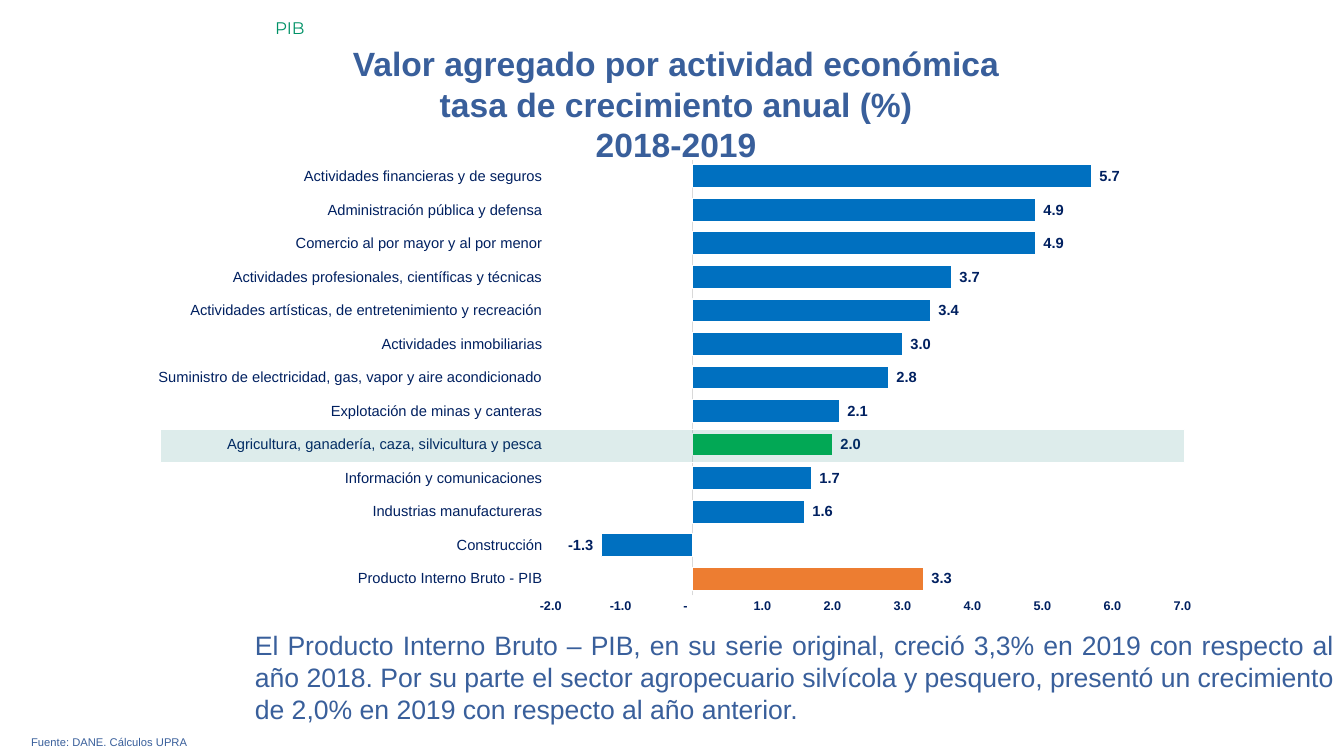
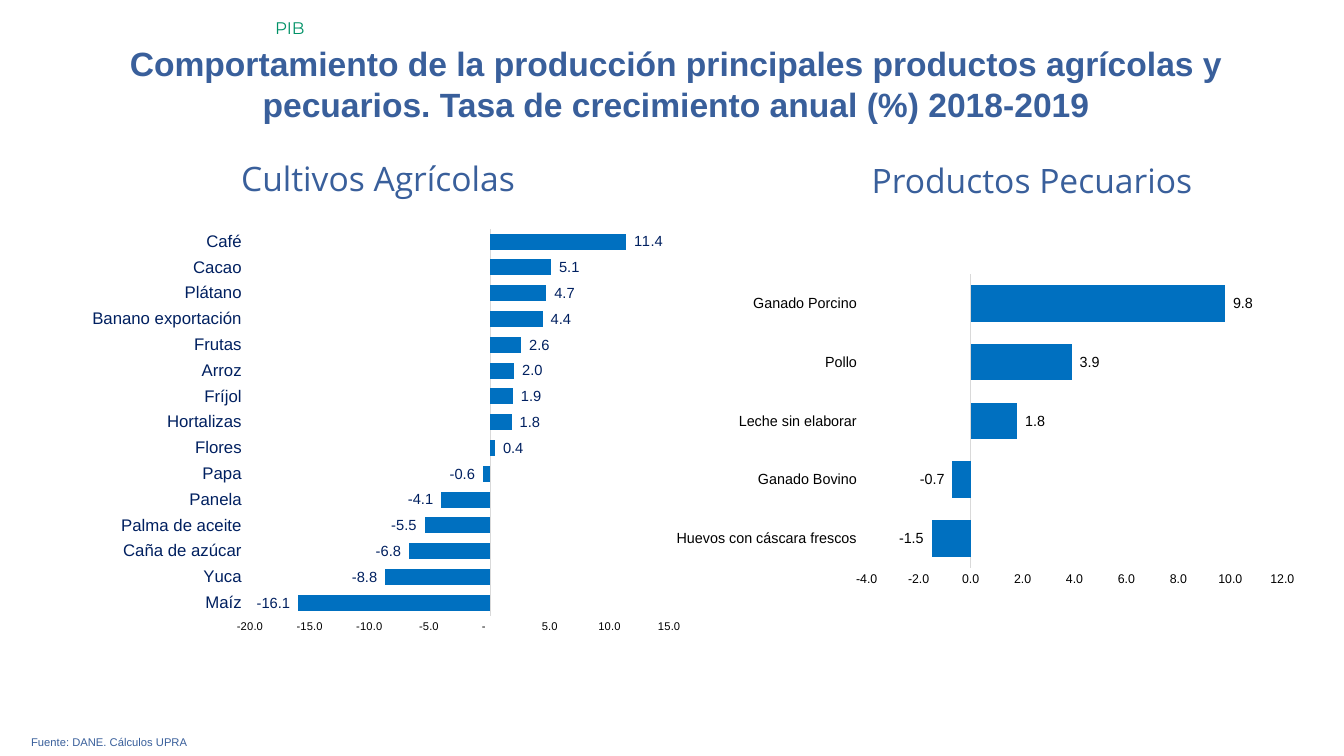
from lxml import etree
from pptx import Presentation
from pptx import util as u
from pptx.chart.data import CategoryChartData
from pptx.dml.color import RGBColor
from pptx.enum import chart as ch
from pptx.enum import shapes, text
from pptx.oxml import ns

PX = 9144  # 100 px to the inch

STEEL = RGBColor(0x39, 0x5F, 0x9B)
GREEN = RGBColor(0x00, 0x92, 0x67)
NAVY = RGBColor(0x00, 0x20, 0x60)
BLACK = RGBColor(0x00, 0x00, 0x00)
WHITE = RGBColor(0xFF, 0xFF, 0xFF)
GRAY = RGBColor(0xD9, 0xD9, 0xD9)
BAR_BLUE = RGBColor(0x00, 0x70, 0xC0)
FARM_GREEN = RGBColor(0x00, 0xB0, 0x50)
GDP_ORANGE = RGBColor(0xED, 0x7D, 0x31)
TEAL = RGBColor(0x11, 0x7A, 0x76)

ACCOUNTING = '_-* #,##0.0_-;\\-* #,##0.0_-;_-* "-"??_-;'
DECIMAL = "#,##0.0"
CENTER, JUSTIFY, LEFT = text.PP_ALIGN.CENTER, text.PP_ALIGN.JUSTIFY, text.PP_ALIGN.LEFT

SECTORS = {
    "Producto Interno Bruto - PIB": 3.3,
    "Construcción": -1.3,
    "Industrias manufactureras": 1.6,
    "Información y comunicaciones": 1.7,
    "Agricultura, ganadería, caza, silvicultura y pesca": 2.0,
    "Explotación de minas y canteras": 2.1,
    "Suministro de electricidad, gas, vapor y aire acondicionado": 2.8,
    "Actividades inmobiliarias": 3.0,
    "Actividades artísticas, de entretenimiento y recreación": 3.4,
    "Actividades profesionales, científicas y técnicas": 3.7,
    "Comercio al por mayor y al por menor": 4.9,
    "Administración pública y defensa": 4.9,
    "Actividades financieras y de seguros": 5.7,
}
CROPS = {
    "Maíz": -16.1, "Yuca": -8.8, "Caña de azúcar": -6.8, "Palma de aceite": -5.5,
    "Panela": -4.1, "Papa": -0.6, "Flores": 0.4, "Hortalizas": 1.8, "Fríjol": 1.9,
    "Arroz": 2.0, "Frutas": 2.6, "Banano exportación": 4.4, "Plátano": 4.7,
    "Cacao": 5.1, "Café": 11.4,
}
LIVESTOCK = {
    "Huevos con cáscara frescos": -1.5, "Ganado Bovino": -0.7,
    "Leche sin elaborar": 1.8, "Pollo": 3.9, "Ganado Porcino": 9.8,
}


def emu(*lengths):
    return [u.Emu(n * PX) for n in lengths]


def style_font(font, size, color, bold=False, name="Arial"):
    font.size, font.bold, font.name = u.Pt(size), bold, name
    font.color.rgb = color


class Deck:
    """Holds the shared style and the slide being filled."""

    def __init__(self):
        self.prs = Presentation()
        self.prs.slide_width, self.prs.slide_height = emu(1333, 750)
        self.s = None

    def slide(self, *title_lines):
        """Start a slide with its title, section label and source line."""
        self.s = self.prs.slides.add_slide(self.prs.slide_layouts[5])
        title = self.s.shapes.title
        title.left, title.top, title.width, title.height = emu(
            45, 38, 1251, 11 + 40 * max(2, len(title_lines)))
        self.fill_text(title.text_frame, title_lines, 24, CENTER, bold=True)
        self.text("Fuente: DANE. Cálculos UPRA", (21, 725, 1291, 24), 8, JUSTIFY)
        self.text("PIB", (263, 13, 1070, 30), 12, LEFT, GREEN, name="Montserrat")

    def fill_text(self, tf, lines, size, align, color=STEEL, bold=False, name="Arial"):
        tf.word_wrap = True
        tf.auto_size = text.MSO_AUTO_SIZE.NONE
        tf.vertical_anchor = text.MSO_ANCHOR.TOP
        for i, line in enumerate(lines):
            p = tf.add_paragraph() if i else tf.paragraphs[0]
            p.text, p.alignment = line, align
            style_font(p.font, size, color, bold, name)

    def text(self, line, box, size, align, color=STEEL, name="Arial"):
        sp = self.s.shapes.add_textbox(*emu(*box))
        self.fill_text(sp.text_frame, [line], size, align, color, name=name)

    def heading(self, line, box):
        self.text(line, box, 24, CENTER, name="Open Sans")

    def band(self, box, color, opacity):
        """Lay a see-through strip over a row; opacity is in percent."""
        sp = self.s.shapes.add_shape(shapes.MSO_SHAPE.RECTANGLE, *emu(*box))
        sp.shadow.inherit = False
        sp.fill.solid()
        sp.fill.fore_color.rgb = color
        clr = sp.element.spPr.find(".//" + ns.qn("a:srgbClr"))
        etree.SubElement(clr, ns.qn("a:alpha"), val=str(opacity * 1000))
        sp.line.color.rgb, sp.line.width = WHITE, u.Pt(1)

    def bars(self, data, box, plot_area, scale, gap, cat_size, val_size,
             cat_color=NAVY, val_color=BLACK, bold=False, axis_format=ACCOUNTING,
             accents=None, outline=None):
        """Add a bar chart; scale is minimum, maximum and step."""
        cd = CategoryChartData()
        cd.categories = list(data)
        cd.add_series("Series 1", list(data.values()))
        chart = self.s.shapes.add_chart(
            ch.XL_CHART_TYPE.BAR_CLUSTERED, *emu(*box), cd).chart
        chart.has_legend = chart.has_title = False
        style_font(chart.font, val_size, BLACK)
        self.place_plot(chart, plot_area)

        cat = chart.category_axis
        cat.tick_label_position = ch.XL_TICK_LABEL_POSITION.LOW
        cat.format.line.color.rgb, cat.format.line.width = GRAY, u.Pt(0.75)
        style_font(cat.tick_labels.font, cat_size, cat_color)

        val = chart.value_axis
        val.minimum_scale, val.maximum_scale, val.major_unit = scale
        val.format.line.fill.background()
        val.tick_labels.number_format = axis_format
        val.tick_labels.number_format_is_linked = False
        style_font(val.tick_labels.font, val_size, val_color, bold)
        for axis in (cat, val):
            axis.has_major_gridlines = False
            axis.major_tick_mark = axis.minor_tick_mark = ch.XL_TICK_MARK.NONE

        plot = chart.plots[0]
        plot.gap_width, plot.overlap, plot.vary_by_categories = gap, 65, False
        series = plot.series[0]
        series.invert_if_negative = False
        self.paint(series.format, BAR_BLUE, outline)
        for i, color in (accents or {}).items():
            self.paint(series.points[i].format, color, outline)

        labels = series.data_labels
        labels.show_value = True
        labels.position = ch.XL_LABEL_POSITION.OUTSIDE_END
        labels.number_format, labels.number_format_is_linked = ACCOUNTING, False
        style_font(labels.font, 10.5, cat_color, bold)

    @staticmethod
    def paint(fmt, color, outline):
        fmt.fill.solid()
        fmt.fill.fore_color.rgb = color
        if outline:
            fmt.line.color.rgb, fmt.line.width = outline, u.Pt(0.75)

    @staticmethod
    def place_plot(chart, area):
        """Fix the inner plot area, given as shares of the chart."""
        plot_area = chart.element.chart.plotArea
        for old in plot_area.findall(ns.qn("c:layout")):
            plot_area.remove(old)
        layout = etree.Element(ns.qn("c:layout"))
        manual = etree.SubElement(layout, ns.qn("c:manualLayout"))
        settings = [("layoutTarget", "inner"), ("xMode", "edge"), ("yMode", "edge")]
        for tag, value in settings + list(zip("xywh", area)):
            etree.SubElement(manual, ns.qn("c:" + tag), val=str(value))
        plot_area.insert(0, layout)


def main():
    deck = Deck()

    deck.slide("Valor agregado por actividad económica",
               "tasa de crecimiento anual (%)", "2018-2019")
    deck.text("El Producto Interno Bruto – PIB, en su serie original, creció 3,3% en 2019 "
              "con respecto al año 2018. Por su parte el sector agropecuario silvícola y "
              "pesquero, presentó un crecimiento de 2,0% en 2019 con respecto al año anterior.",
              (243, 619, 1090, 106), 19, JUSTIFY)
    deck.bars(SECTORS, (136, 149, 1070, 470), (0.385, 0.02, 0.584, 0.92), (-2, 7, 1),
              gap=46, cat_size=10.5, val_size=9, val_color=NAVY, bold=True,
              accents={0: GDP_ORANGE, 4: FARM_GREEN}, outline=WHITE)
    deck.band((159, 426, 1016, 33), TEAL, 14)

    deck.slide("Comportamiento de la producción principales productos agrícolas y "
               "pecuarios. Tasa de crecimiento anual (%) 2018-2019")
    deck.heading("Cultivos Agrícolas", (217, 152, 316, 50))
    deck.heading("Productos Pecuarios", (843, 154, 361, 50))
    deck.bars(CROPS, (41, 211, 644, 441), (0.324, 0.036, 0.643, 0.871), (-20, 15, 5),
              gap=61, cat_size=12, val_size=8)
    deck.bars(LIVESTOCK, (671, 261, 626, 337), (0.285, 0.033, 0.674, 0.864), (-4, 12, 2),
              gap=61, cat_size=10.5, val_size=9, cat_color=BLACK, axis_format=DECIMAL)

    deck.prs.save("out.pptx")


if __name__ == "__main__":
    main()
